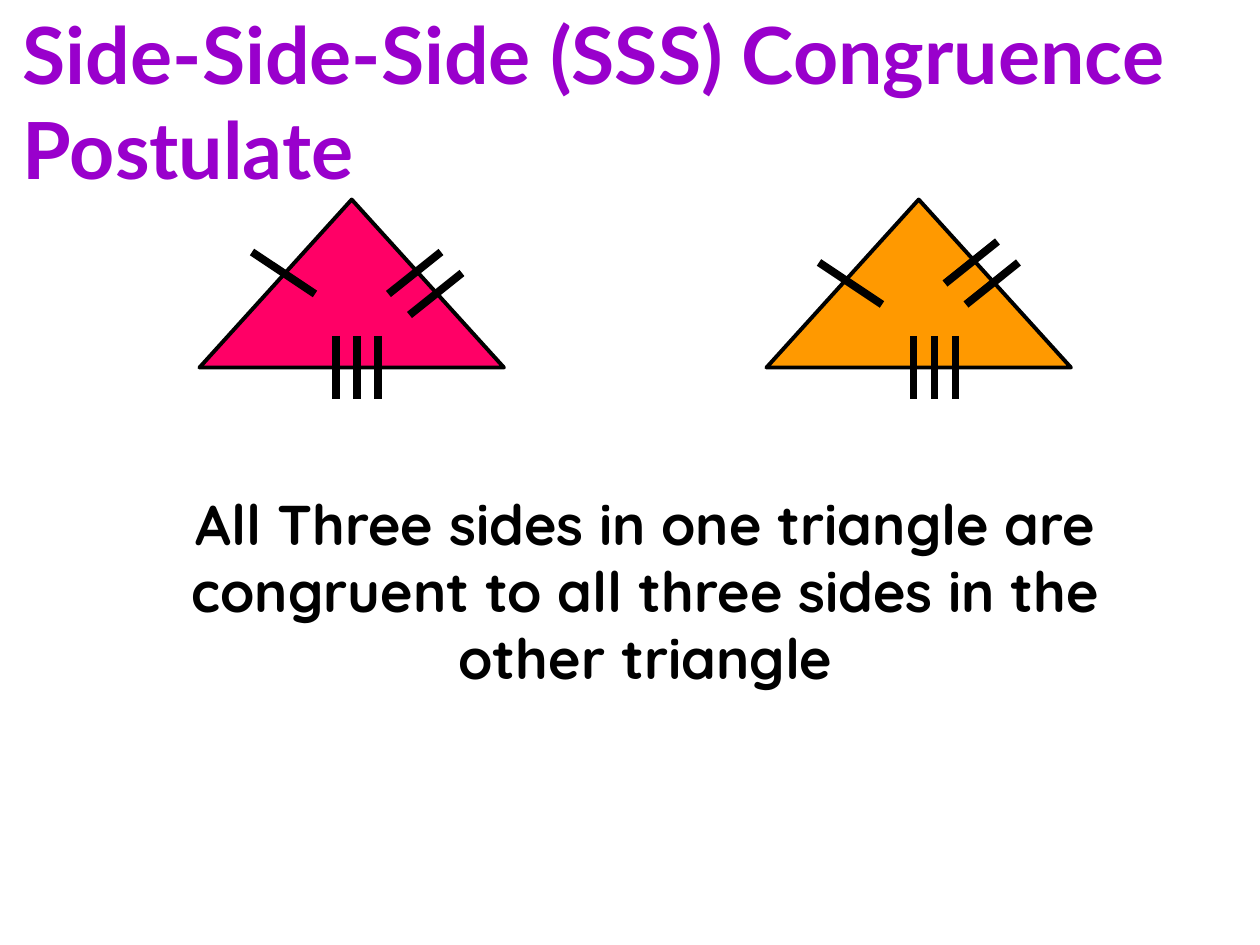
from pptx import Presentation
from pptx.dml.color import RGBColor
from pptx.enum import shapes, text
from pptx.oxml import ns
from pptx.util import Pt
from lxml import etree

PURPLE = RGBColor(0x99, 0x00, 0xCC)
PINK = RGBColor(0xFF, 0x00, 0x66)
ORANGE = RGBColor(0xFF, 0x99, 0x00)
BLACK = RGBColor(0x00, 0x00, 0x00)

TEXTS = [
    ("Side-Side-Side (SSS) Congruence Postulate",
     (6, 0, 708, 115), "Lato", 45, PURPLE, text.PP_ALIGN.LEFT),
    ("All Three sides in one triangle are congruent to all three sides in the other triangle",
     (96, 276, 546, 122), "Quicksand", 32, BLACK, text.PP_ALIGN.CENTER),
]

TRIANGLE_TOP, TRIANGLE_WIDTH, TRIANGLE_HEIGHT = 114, 174, 96
TRIANGLES = [
    {"left": 114, "fill": PINK,
     "first_marks": {"left": (144, 144), "right": (252, 144), "base": (192, 192)}},
    {"left": 438, "fill": ORANGE,
     "first_marks": {"left": (468, 150), "right": (570, 138), "base": (522, 192)}},
]
SIDES = {
    "left": {"count": 1, "stroke": (36, 24), "step": (0, 0)},
    "right": {"count": 2, "stroke": (-30, 24), "step": (12, 12)},
    "base": {"count": 3, "stroke": (0, 36), "step": (12, 0)},
}


def add_text(slide, wording, box, font_name, size, color, alignment):
    shape = slide.shapes.add_textbox(*map(Pt, box))
    frame = shape.text_frame
    frame.word_wrap = True
    frame.auto_size = text.MSO_AUTO_SIZE.SHAPE_TO_FIT_TEXT
    paragraph = frame.paragraphs[0]
    paragraph.alignment = alignment
    run = paragraph.add_run()
    run.text = wording
    run.font.name = font_name
    run.font.size = Pt(size)
    run.font.bold = True
    run.font.color.rgb = color


def add_triangle(slide, left, fill):
    shape = slide.shapes.add_shape(
        shapes.MSO_SHAPE.ISOSCELES_TRIANGLE,
        Pt(left), Pt(TRIANGLE_TOP), Pt(TRIANGLE_WIDTH), Pt(TRIANGLE_HEIGHT))
    shape.shadow.inherit = False
    shape.fill.solid()
    shape.fill.fore_color.rgb = fill
    shape.line.color.rgb = BLACK
    shape.line.width = Pt(2.25)


def add_marks(slide, first, count, stroke, step):
    for index in range(count):
        x = first[0] + index * step[0]
        y = first[1] + index * step[1]
        mark = slide.shapes.add_connector(
            shapes.MSO_CONNECTOR.STRAIGHT,
            Pt(x), Pt(y), Pt(x + stroke[0]), Pt(y + stroke[1]))
        mark.line.color.rgb = BLACK
        mark.line.width = Pt(4.5)
        etree.SubElement(mark._element.spPr, ns.qn("a:effectLst"))


def main():
    presentation = Presentation()
    presentation.slide_width = Pt(720)
    presentation.slide_height = Pt(540)
    slide = presentation.slides.add_slide(presentation.slide_layouts[6])
    for entry in TEXTS:
        add_text(slide, *entry)
    for triangle in TRIANGLES:
        add_triangle(slide, triangle["left"], triangle["fill"])
        for side, first in triangle["first_marks"].items():
            add_marks(slide, first, **SIDES[side])
    presentation.save("out.pptx")


if __name__ == "__main__":
    main()
